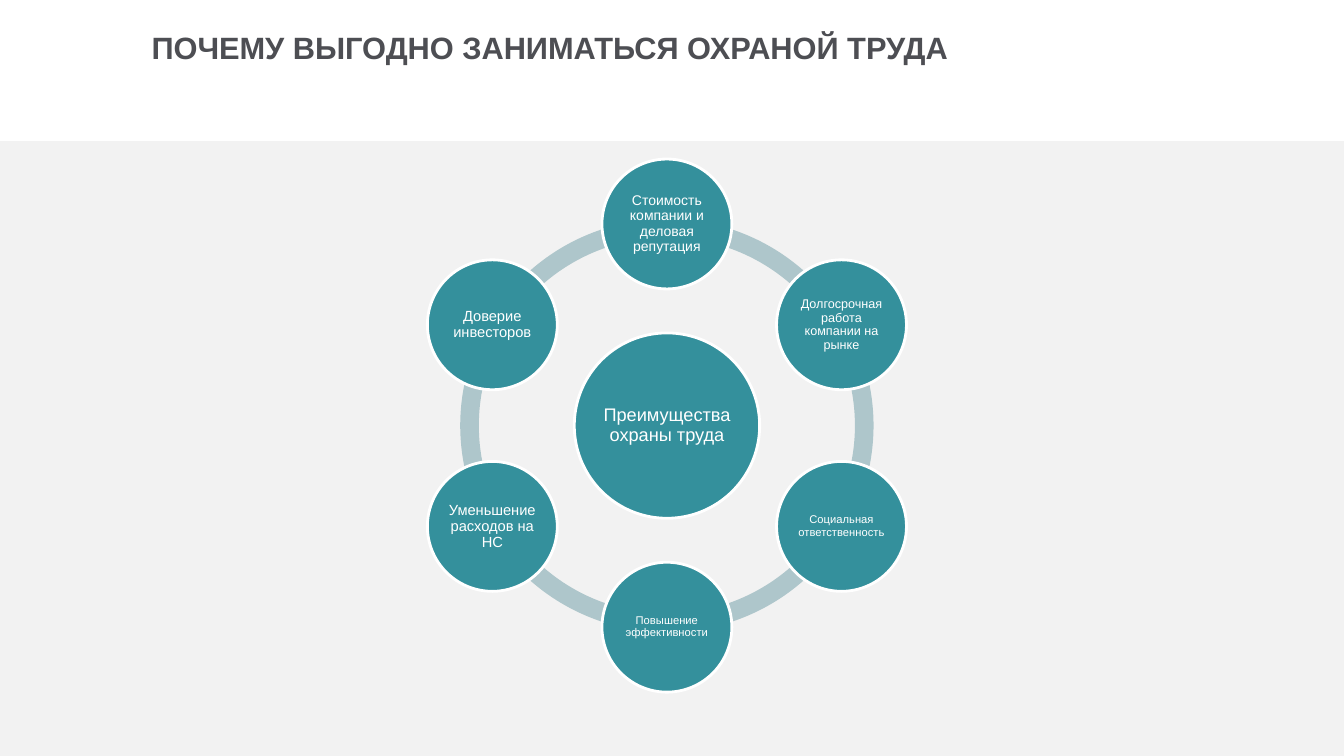
import math
from pptx import Presentation
from pptx.dml.color import RGBColor
from pptx.enum import shapes as sh, text as tx
from pptx.util import Pt

WHITE, TEAL, MIST, GREY, INK = "FFFFFF", "34909C", "AEC6CB", "F2F2F2", "4D4E53"
MIDX, MIDY = 476.4, 304      # centre of the wheel
ORBIT, RING, BAND = 144, 147.6, 0.045
HUB, NODE = 132.4, 92.8      # diameters


def paint(fmt, color):
    if hasattr(fmt, "solid"):
        fmt.solid()
        fmt = fmt.fore_color
    fmt.rgb = RGBColor.from_string(color)


def write(shape, words, size, color=WHITE, bold=False, inset=1,
          anchor=tx.MSO_ANCHOR.MIDDLE, space=0.9):
    frame = shape.text_frame
    frame.word_wrap = True
    frame.auto_size = tx.MSO_AUTO_SIZE.NONE
    frame.vertical_anchor = anchor
    frame.margin_left = frame.margin_right = Pt(inset)
    frame.margin_top = frame.margin_bottom = Pt(inset)
    frame.text = words
    para = frame.paragraphs[0]
    para.alignment = tx.PP_ALIGN.CENTER
    para.line_spacing = space
    para.font.name, para.font.size, para.font.bold = "Arial", Pt(size), bold
    paint(para.font.color, color)


deck = Presentation()
deck.slide_width, deck.slide_height = Pt(960), Pt(540)
slide = deck.slides.add_slide(deck.slide_layouts[5])
parts = slide.shapes

# Grey field under the heading
field = parts.add_shape(sh.MSO_SHAPE.RECTANGLE, 0, Pt(100.8), Pt(960), Pt(439.2))
field.shadow.inherit = False
paint(field.fill, GREY)
field.line.fill.background()

# Heading
title = parts.title
title.left, title.top, title.width, title.height = Pt(33.8), Pt(20.2), Pt(717.8), Pt(56.9)
write(title, "ПОЧЕМУ ВЫГОДНО ЗАНИМАТЬСЯ ОХРАНОЙ ТРУДА", 22, INK, bold=True,
      inset=0, anchor=tx.MSO_ANCHOR.TOP, space=1.0)

# Ring of six arcs, 60 degrees each
for start in range(30, 390, 60):
    arc = parts.add_shape(sh.MSO_SHAPE.BLOCK_ARC, Pt(MIDX - RING), Pt(MIDY - RING),
                          Pt(2 * RING), Pt(2 * RING))
    arc.shadow.inherit = False
    paint(arc.fill, MIST)
    arc.line.fill.background()
    # Angles are stored in 60000ths of a degree, adjustments in 100000ths
    arc.adjustments[0] = start * 0.6
    arc.adjustments[1] = (start + 60) % 360 * 0.6
    arc.adjustments[2] = BAND

# Hub and the benefits clockwise from the top
nodes = [
    ("Стоимость компании и деловая репутация", 10),
    ("Долгосрочная работа компании на рынке", 9),
    ("Социальная ответственность", 8),
    ("Повышение эффективности", 8),
    ("Уменьшение расходов на НС", 10.5),
    ("Доверие инвесторов", 10.5),
]
discs = [("Преимущества охраны труда", 13, MIDX, MIDY, HUB)]
for i, (words, size) in enumerate(nodes):
    turn = math.radians(60 * i)
    discs.append((words, size, MIDX + ORBIT * math.sin(turn),
                  MIDY - ORBIT * math.cos(turn), NODE))

for words, size, x, y, wide in discs:
    disc = parts.add_shape(sh.MSO_SHAPE.OVAL, Pt(x - wide / 2), Pt(y - wide / 2),
                           Pt(wide), Pt(wide))
    disc.shadow.inherit = False
    paint(disc.fill, TEAL)
    paint(disc.line.fill, WHITE)
    disc.line.width = Pt(2)
    write(disc, words, size)

deck.save("out.pptx")
